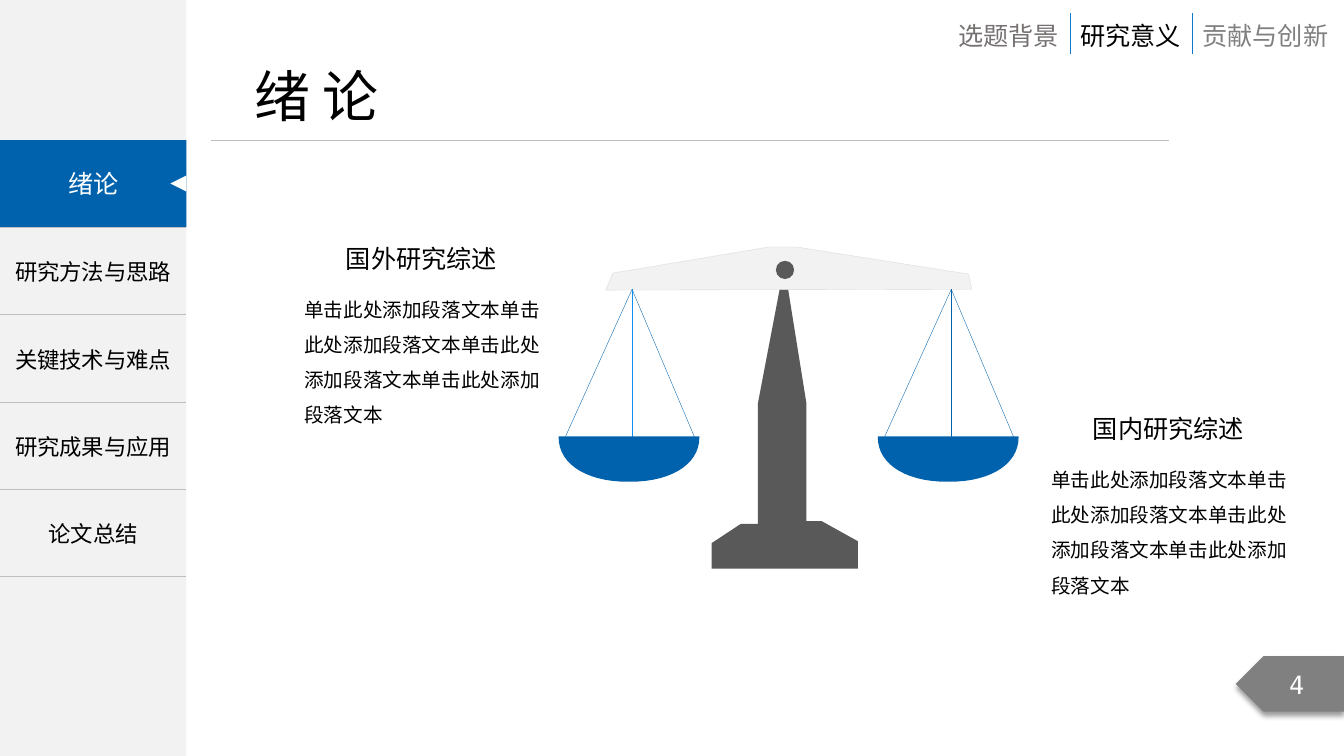
import math
from lxml import etree
from pptx import Presentation
from pptx import util as u
from pptx.dml.color import RGBColor
from pptx.enum import shapes, text
from pptx.oxml import ns

COLORS = {"blue": "0062AC", "sky": "0F8FEF", "tab_line": "0D79CA",
          "panel": "F2F2F2", "rule": "BFBFBF", "edge": "D9D9D9",
          "stand": "595959", "gray": "808080", "muted": "767171",
          "black": "000000", "white": "FFFFFF"}
CJK = "Noto Sans CJK SC"
CENTER, LEFT = text.PP_ALIGN.CENTER, text.PP_ALIGN.LEFT
TOP, MIDDLE = text.MSO_ANCHOR.TOP, text.MSO_ANCHOR.MIDDLE
KIND = shapes.MSO_SHAPE
SIDE_WIDTH, MENU_TOP, ROW_HEIGHT = 133.2, 100.1, 62.4
BODY = "单击此处添加段落文本" * 4


def color(name):
    return RGBColor.from_string(COLORS[name])


def points(*values):
    return [u.Pt(value) for value in values]


def write(frame, words, size=18, ink="black", font=CJK, align=LEFT, spacing=None):
    para = frame.paragraphs[0]
    para.alignment = align
    if spacing:
        para.line_spacing = spacing
    span = para.add_run()
    span.text = words
    span.font.size = u.Pt(size)
    span.font.name = font
    span.font.color.rgb = color(ink)
    east_asian = etree.SubElement(span.font._element, ns.qn("a:ea"))
    east_asian.set("typeface", font)


def label(page, box, words, wrap=True, **style):
    frame = page.shapes.add_textbox(*points(*box)).text_frame
    frame.word_wrap = wrap
    frame.auto_size = text.MSO_AUTO_SIZE.SHAPE_TO_FIT_TEXT
    write(frame, words, **style)


def paint(shape, fill, edge=None):
    shape.shadow.inherit = False
    shape.fill.solid()
    shape.fill.fore_color.rgb = color(fill)
    if edge:
        shape.line.color.rgb = color(edge)
        shape.line.width = u.Pt(0.25)
    else:
        shape.line.fill.background()
    return shape


def preset(page, kind, box, fill):
    return paint(page.shapes.add_shape(kind, *points(*box)), fill)


def outline(page, origin, corners, fill, edge=None):
    spots = [points(origin[0] + x, origin[1] + y) for x, y in corners]
    builder = page.shapes.build_freeform(*spots[0], scale=1.0)
    builder.add_line_segments(spots[1:], close=True)
    return paint(builder.convert_to_shape(), fill, edge)


def line(page, start, end, ink, width):
    stroke = page.shapes.add_connector(
        shapes.MSO_CONNECTOR.STRAIGHT, *points(*start, *end))
    stroke.line.color.rgb = color(ink)
    stroke.line.width = u.Pt(width)
    etree.SubElement(stroke._element.spPr, ns.qn("a:effectLst"))


def cell_borders(cell):
    props = cell._tc.get_or_add_tcPr()
    for index, side in enumerate(("lnL", "lnR", "lnT", "lnB")):
        border = etree.Element(ns.qn("a:" + side), w=str(u.Pt(1)))
        if side in ("lnT", "lnB"):
            fill = etree.SubElement(border, ns.qn("a:solidFill"))
            etree.SubElement(fill, ns.qn("a:srgbClr"), val=COLORS["rule"])
        else:
            etree.SubElement(border, ns.qn("a:noFill"))
        props.insert(index, border)


def add_heading(page, left, top):
    line(page, (left, top + 60), (left + 684.7, top + 60), "rule", 0.5)
    title = page.shapes.title
    title.left, title.top, title.width, title.height = points(
        left + 23.8, top, 115.2, 55.4)
    frame = title.text_frame
    frame.word_wrap = False
    frame.auto_size = text.MSO_AUTO_SIZE.SHAPE_TO_FIT_TEXT
    frame.vertical_anchor = TOP
    write(frame, "绪 论", size=40)


def add_sidebar(page, left, top, width, height):
    preset(page, KIND.RECTANGLE, (left, top, width, height), "panel")
    menu_top = top + MENU_TOP
    # The first row lies under the highlighted item
    entries = ("", "研究方法与思路", "关键技术与难点", "研究成果与应用", "论文总结")
    menu = page.shapes.add_table(len(entries), 1, *points(
        left, menu_top, width, ROW_HEIGHT * len(entries))).table
    menu.first_row = menu.horz_banding = False
    for row, entry in enumerate(entries):
        cell = menu.cell(row, 0)
        cell.fill.background()
        cell.vertical_anchor = MIDDLE
        cell_borders(cell)
        if entry:
            write(cell.text_frame, entry, size=16, align=CENTER)
    # Highlighted item and its pointer
    current = preset(page, KIND.RECTANGLE, (left, menu_top, width, 62), "blue")
    current.text_frame.vertical_anchor = MIDDLE
    write(current.text_frame, "绪论", ink="white", align=CENTER)
    pointer = preset(page, KIND.ISOSCELES_TRIANGLE,
                     (left + width - 11.5, menu_top + 25.2, 11.5, 11.5), "white")
    pointer.rotation = 270


def add_tabs(page, left, top):
    pitch = 87.1
    tabs = (("选题背景", "muted"), ("研究意义", "black"), ("贡献与创新", "gray"))
    for index, (words, ink) in enumerate(tabs):
        x = left + index * pitch
        if index:
            line(page, (x, top), (x, top + 29.5), "tab_line", 0.5)
        label(page, (x, top + 1.2, 18 * len(words) + 14.4, 29),
              words, wrap=False, ink=ink)


def add_page_number(page, left, top, width, height):
    tag = preset(page, KIND.PENTAGON, (left, top, width, height), "gray")
    tag._element.spPr.xfrm.set("flipH", "1")
    effects = tag._element.spPr.find(ns.qn("a:effectLst"))
    shadow = etree.SubElement(
        effects, ns.qn("a:outerShdw"), blurRad=str(u.Pt(4)),
        dist=str(u.Pt(3)), dir="5400000", algn="t", rotWithShape="0")
    shade = etree.SubElement(shadow, ns.qn("a:srgbClr"), val=COLORS["black"])
    etree.SubElement(shade, ns.qn("a:alpha"), val="40000")
    tag.text_frame.vertical_anchor = MIDDLE
    write(tag.text_frame, "4", ink="white", font="DejaVu Sans Mono", align=CENTER)


def add_pan(page, left, top, middle_ink):
    for x, y, ink in ((97.8, 107.2, "blue"), (52.5, 106.6, middle_ink),
                      (4.9, 105.2, "blue")):
        line(page, (left + 52.5, top), (left + x, top + y), ink, 0.25)
    # Bowl: lower half of a slightly squared ellipse
    half_width, depth, power = 50.3, 32.4, 2 / 2.2
    bowl = []
    for step in range(31):
        angle = math.pi * step / 30
        across = math.copysign(abs(math.cos(angle)) ** power, math.cos(angle))
        bowl.append((half_width * (1 + across),
                     depth * abs(math.sin(angle)) ** power))
    outline(page, (left, top + 105), bowl, "blue")


def add_balance(page, left, top):
    stand = ((161.2, 13.4), (177, 112), (177, 196.2), (187.8, 196.2),
             (213.7, 210.6), (213.7, 230.2), (109.3, 230.2), (109.3, 212),
             (130.2, 198.2), (142.4, 198.2), (142.4, 112))
    beam = ((33.7, 31.2), (295.1, 30.6), (292.9, 19.8), (169.8, 0.4),
            (150.4, 0.4), (38.8, 19.1))
    outline(page, (left, top), stand, "stand")
    outline(page, (left, top), beam, "panel", "edge")
    preset(page, KIND.OVAL, (left + 155.2, top + 10.3, 13, 13), "stand")
    for offset, middle_ink in ((228, "blue"), (0, "sky")):
        add_pan(page, left + offset, top + 30.7, middle_ink)


def add_review(page, left, top, heading):
    label(page, (left + 16.8, top, 148.3, 28), heading, align=CENTER)
    label(page, (left, top + 30.6, 184.3, 105), BODY, size=14, spacing=1.5)


def main():
    deck = Presentation()
    deck.slide_width, deck.slide_height = points(960, 540)
    page = deck.slides.add_slide(deck.slide_layouts[5])
    add_sidebar(page, 0, 0, SIDE_WIDTH, 540)
    add_heading(page, 150.5, 40.1)
    add_tabs(page, 677.5, 9.4)
    add_page_number(page, 882.7, 468.7, 77.3, 39.6)
    add_balance(page, 399, 176)
    add_review(page, 743.8, 291.6, "国内研究综述")
    add_review(page, 210.2, 170, "国外研究综述")
    deck.save("out.pptx")


if __name__ == "__main__":
    main()
